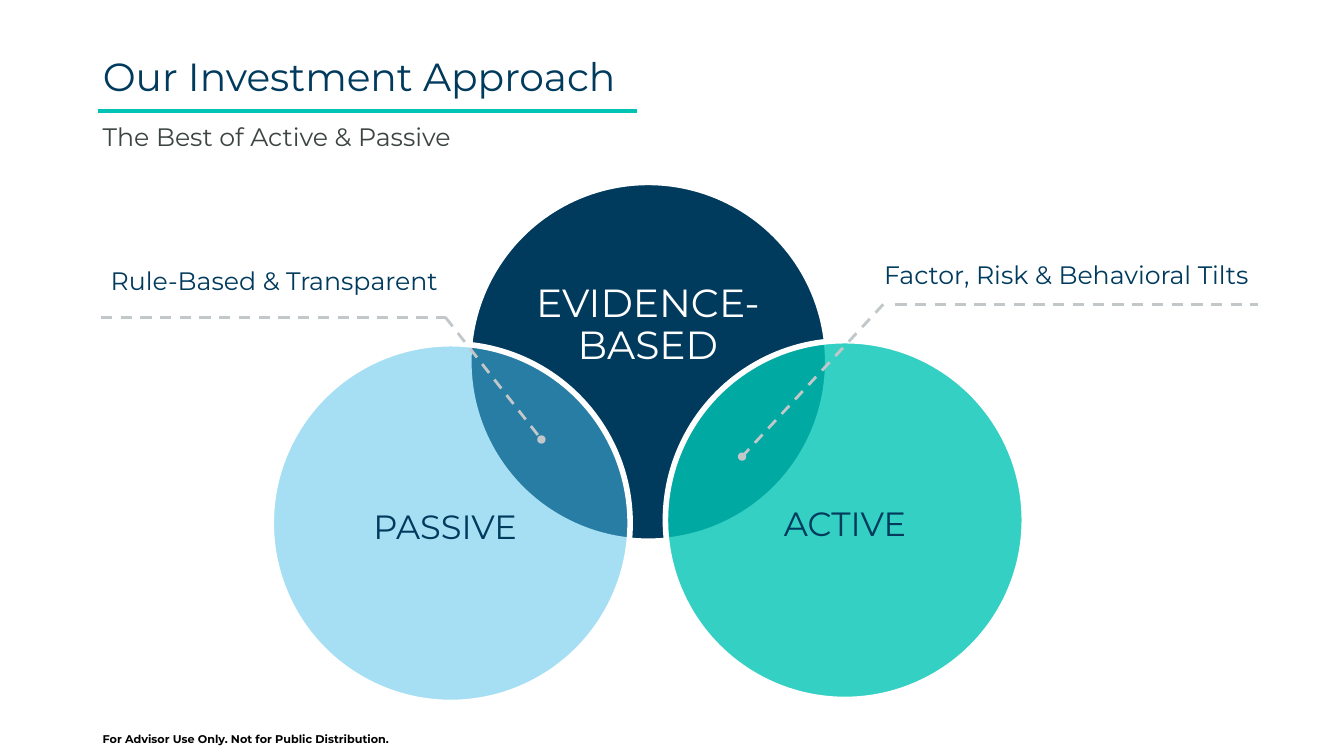
from lxml import etree
from pptx import Presentation
from pptx import util as u
from pptx.dml.color import RGBColor
from pptx.enum import dml, shapes, text
from pptx.oxml.ns import qn

PX = 9144  # EMU per px, 100 px to the inch
FONT = "Montserrat"
NAVY, TEAL, GRAY, WHITE = "003A5D", "00C4B3", "C2C7C9", "FFFFFF"
CIRCLE = 356
LEFT, CENTER = text.PP_ALIGN.LEFT, text.PP_ALIGN.CENTER
TOP, MIDDLE, BOTTOM = (text.MSO_ANCHOR.TOP, text.MSO_ANCHOR.MIDDLE,
                       text.MSO_ANCHOR.BOTTOM)


def px(n):
    return u.Emu(n * PX)


def rgb(value):
    return RGBColor.from_string(value)


def set_all(obj, values):
    for name, value in values.items():
        setattr(obj, name, value)


def write(sp, words, size, color, align=LEFT, anchor=TOP, bold=False,
          spacing=1.0, wrap=True, inset=None):
    tf = sp.text_frame
    set_all(tf, {"word_wrap": wrap, "vertical_anchor": anchor,
                 "auto_size": text.MSO_AUTO_SIZE.NONE})
    if inset is not None:
        set_all(tf, {f"margin_{side}": px(inset)
                     for side in ("left", "top", "right", "bottom")})
    p = tf.paragraphs[0]
    set_all(p, {"alignment": align, "line_spacing": spacing})
    r = p.add_run()
    r.text = words
    set_all(r.font, {"name": FONT, "size": u.Pt(size), "bold": bold})
    r.font.color.rgb = rgb(color)


def add_title(s, box, words):
    sp = s.shapes.title
    set_all(sp, dict(zip(("left", "top", "width", "height"), map(px, box))))
    write(sp, words, 28, NAVY, anchor=BOTTOM, spacing=0.9)


def add_label(s, box, words, size, color=NAVY, **fmt):
    write(s.shapes.add_textbox(*map(px, box)), words, size, color, **fmt)


def add_circle(s, left, top, color, opacity=100):
    sp = s.shapes.add_shape(shapes.MSO_SHAPE.OVAL,
                            *map(px, (left, top, CIRCLE, CIRCLE)))
    sp.shadow.inherit = False
    sp.fill.solid()
    sp.fill.fore_color.rgb = rgb(color)
    sp.line.color.rgb = rgb(WHITE)
    sp.line.width = u.Pt(4)
    if opacity < 100:
        fill = sp.fill._xPr.find(qn("a:solidFill"))[0]
        etree.SubElement(fill, qn("a:alpha"), val=str(opacity * 1000))


def add_line(s, start, end, color=GRAY, width=2, dashed=True, dot=False):
    line = s.shapes.add_connector(shapes.MSO_CONNECTOR.STRAIGHT,
                                  *map(px, start + end))
    line.line.color.rgb = rgb(color)
    line.line.width = u.Pt(width)
    if dashed:
        line.line.dash_style = dml.MSO_LINE.DASH
    if dot:
        etree.SubElement(line.line._get_or_add_ln(), qn("a:tailEnd"), type="oval")
    etree.SubElement(line._element.spPr, qn("a:effectLst"))


def main():
    prs = Presentation()
    prs.slide_width, prs.slide_height = px(1333), px(750)
    s = prs.slides.add_slide(prs.slide_layouts[5])

    # Heading
    add_title(s, (92, 0, 1150, 104), "Our Investment Approach")
    add_label(s, (92, 119, 529, 39), "The Best of Active & Passive", 18,
              "3C4542", spacing=0.9)
    add_line(s, (97, 110), (632, 110), TEAL, 3, dashed=False)

    # Overlapping circles
    add_circle(s, 465, 181, NAVY)
    add_label(s, (512, 243, 261, 160), "EVIDENCE-BASED", 28, WHITE,
              align=CENTER, anchor=MIDDLE, spacing=0.9, inset=0)
    add_circle(s, 660, 338, "00C5B4", 80)
    add_circle(s, 269, 341, "4EC1EA", 50)
    add_label(s, (346, 497, 191, 50), "PASSIVE", 24, align=CENTER)
    add_label(s, (752, 494, 172, 50), "ACTIVE", 24, align=CENTER)

    # Callouts for the overlaps
    add_label(s, (100, 258, 354, 40), "Rule-Based & Transparent", 18, wrap=False)
    add_label(s, (867, 252, 395, 40), "Factor, Risk & Behavioral Tilts", 18,
              wrap=False)
    add_line(s, (100, 315), (442, 315))
    add_line(s, (442, 315), (537, 436), dot=True)
    add_line(s, (888, 302), (1248, 302))
    add_line(s, (876, 302), (736, 453), dot=True)

    # Footer
    add_label(s, (92, 722, 596, 24),
              "For Advisor Use Only. Not for Public Distribution.", 8,
              "000000", bold=True)

    prs.save("out.pptx")


if __name__ == "__main__":
    main()
